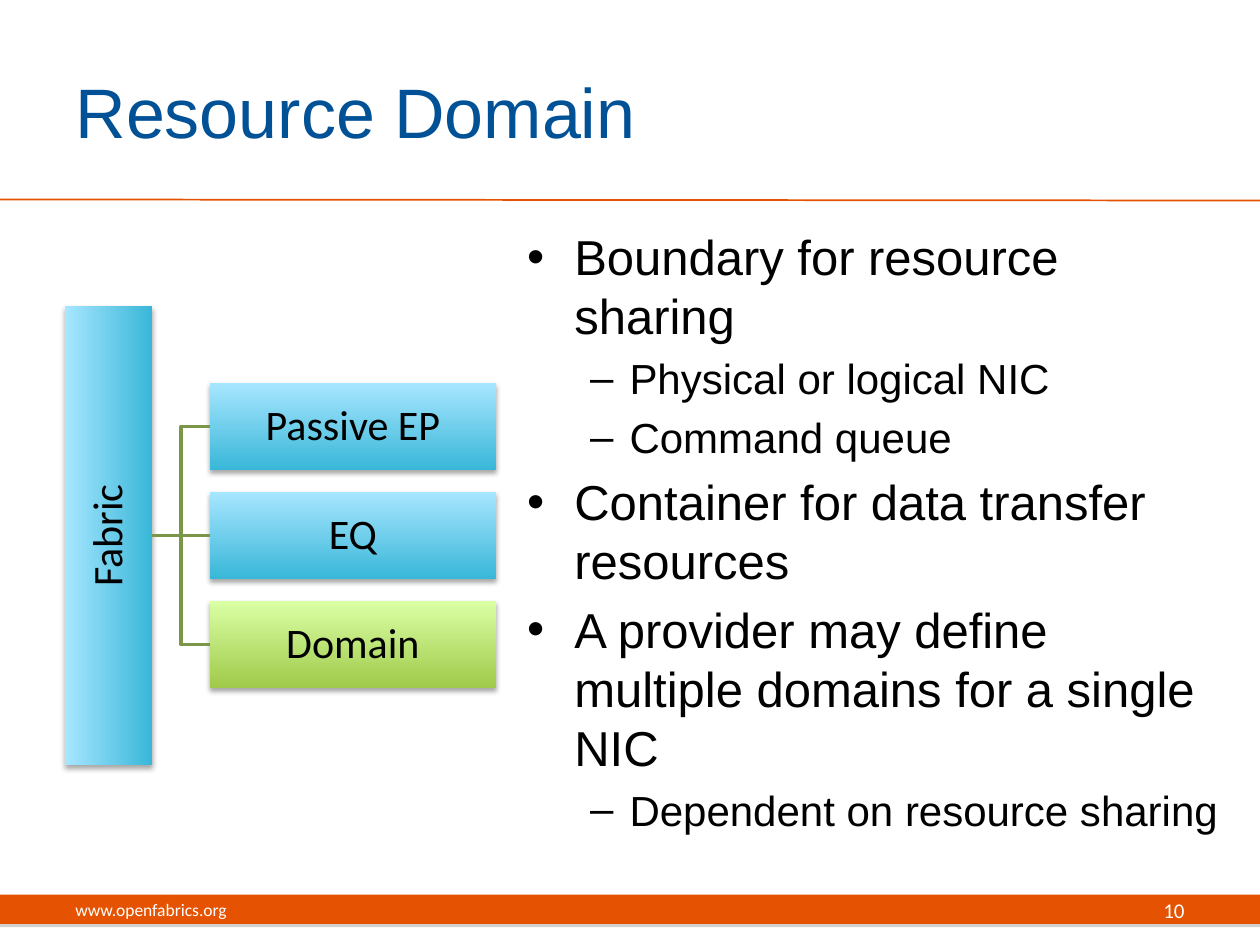
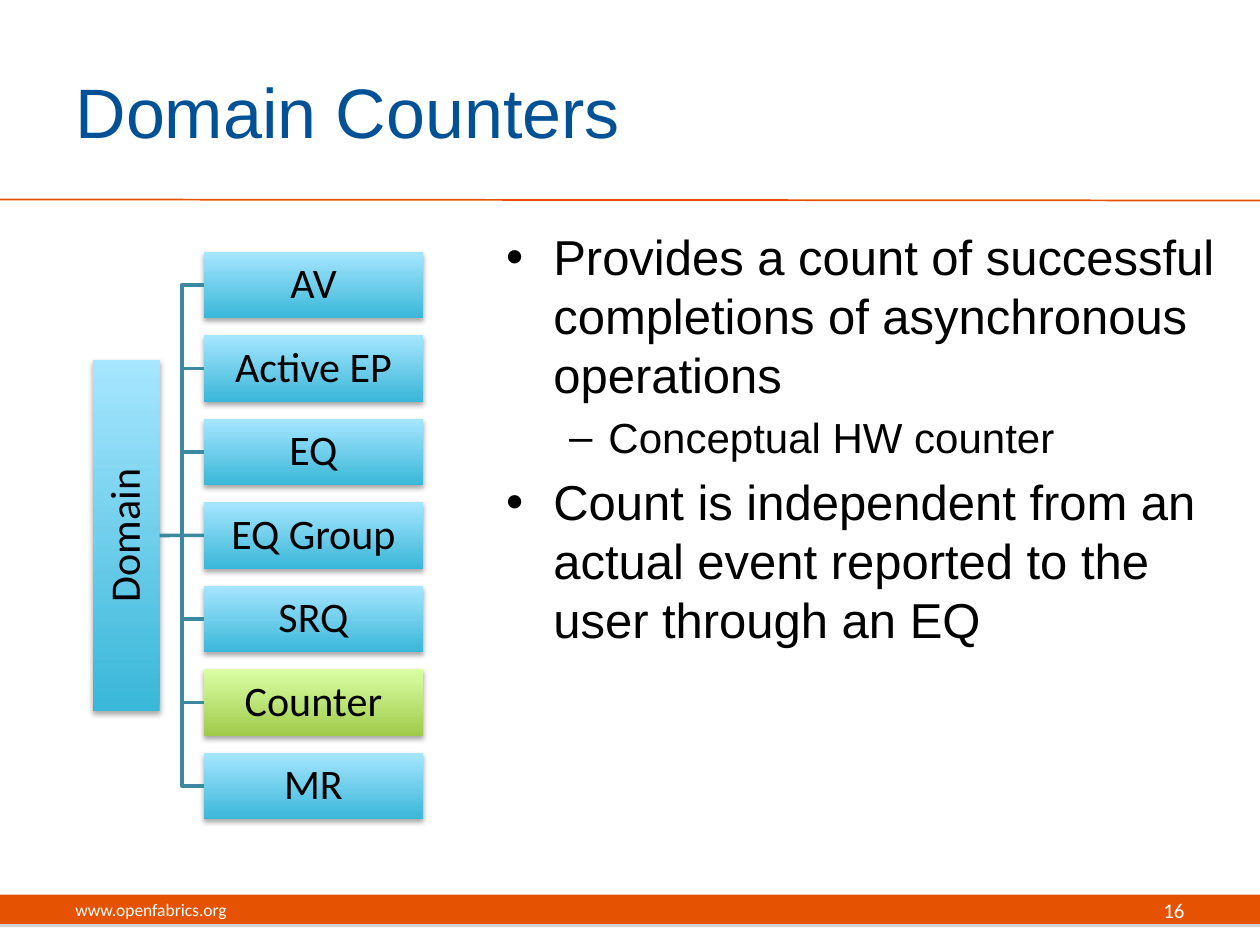
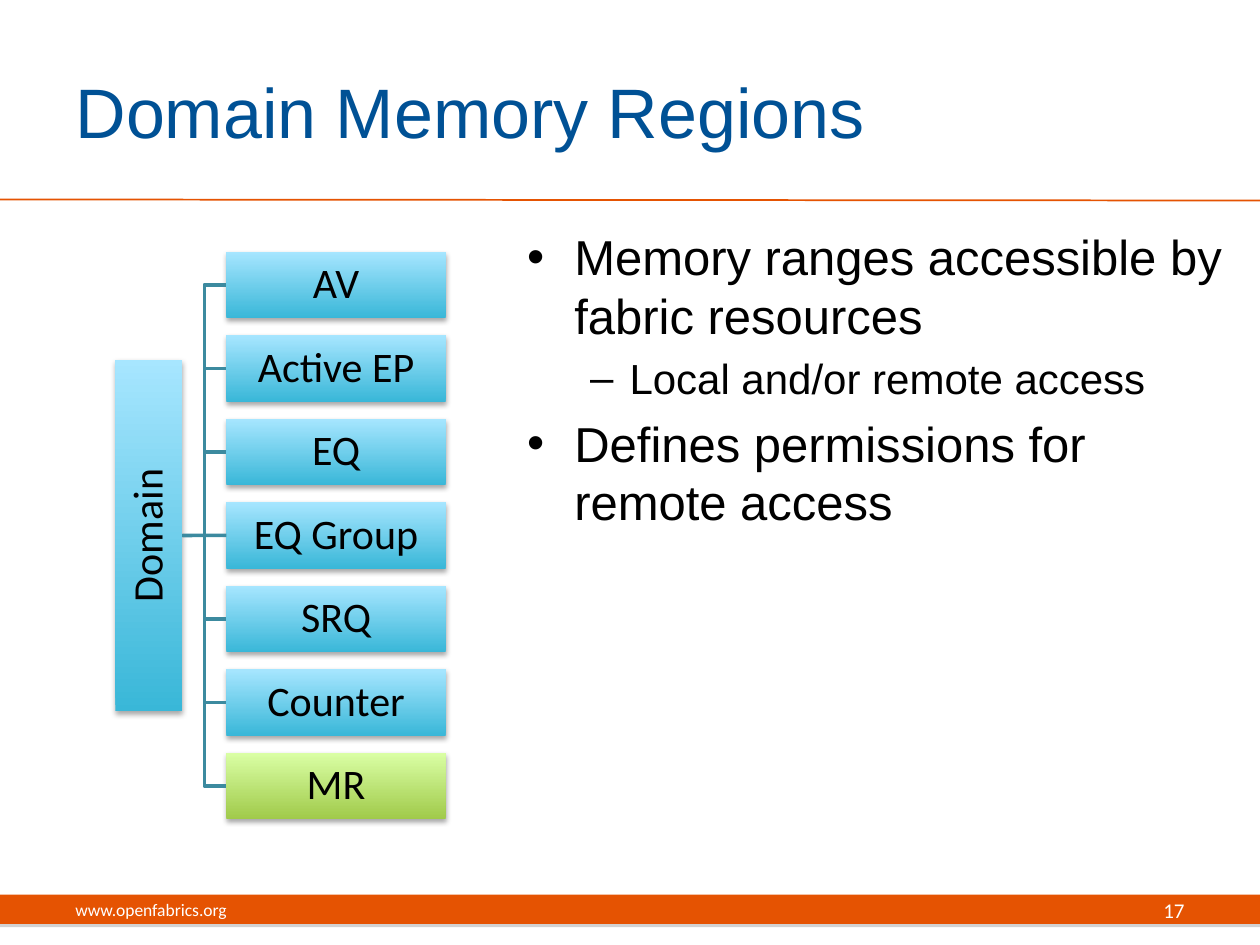
from dataclasses import dataclass

from lxml.etree import SubElement
from pptx import Presentation
from pptx.dml.color import RGBColor
from pptx.enum.shapes import MSO_CONNECTOR, MSO_SHAPE
from pptx.enum.text import MSO_ANCHOR, MSO_AUTO_SIZE, PP_ALIGN
from pptx.oxml.ns import qn
from pptx.util import Inches, Pt

COLUMNS, ROWS = 120, 90
SLIDE_WIDTH, SLIDE_HEIGHT = Inches(10), Inches(7.5)
UNIT = SLIDE_WIDTH // COLUMNS


@dataclass(frozen=True)
class Theme:
    orange: str = "E55302"
    title_blue: str = "005195"
    black: str = "000000"
    white: str = "FFFFFF"
    band_shadow: str = "808080"
    blue_gradient: tuple = ("39B7D8", "A7E6FF")
    green_gradient: tuple = ("A0CA4A", "DAFFA5")
    olive_line: str = "7C9647"
    teal_line: str = "3C8A9F"
    text_font: str = "Arial"
    label_font: str = "Calibri"
    title_size: int = 40
    list_sizes: tuple = (28, 24)
    label_size: int = 24
    address_size: int = 10
    number_size: int = 12


@dataclass(frozen=True)
class Box:
    left: float
    top: float
    width: float
    height: float

    def emu(self):
        return [grid(side) for side in (self.left, self.top, self.width, self.height)]


@dataclass(frozen=True)
class Tree:
    box: Box
    root: str
    branches: tuple
    marked: str
    line_color: str
    root_angle: int


THEME = Theme()
TITLE_BOX = Box(6, 3, 98, 15)
BAND_BOX = Box(0, 85.2, COLUMNS, 2.8)
ADDRESS_BOX = Box(6, 84.25, 38, 4.8)
NUMBER_BOX = Box(86, 84.25, 28, 4.8)
WIDE_LIST = Box(47, 21, 71, 59.4)
NARROW_LIST = Box(49, 21, 69, 59.4)
DOMAIN_PARTS = ("AV", "Active EP", "EQ", "EQ Group", "SRQ", "Counter", "MR")

GAP_SHARE, BRANCH_SHARE, PITCH_SHARE, ROOT_SHARE = 0.66, 3.28, 1.25, 5.26


def grid(units):
    return round(units * UNIT)


def color(value):
    return RGBColor.from_string(value)


def set_font(para, name, size, value):
    para.font.name = name
    para.font.size = Pt(size)
    para.font.color.rgb = color(value)


def place(shape, box):
    shape.left, shape.top, shape.width, shape.height = box.emu()


def add_shadow(shape, value, blur):
    shape.shadow.inherit = False
    effects = shape.element.spPr.find(qn("a:effectLst"))
    shadow = SubElement(effects, qn("a:outerShdw"), blurRad=str(Pt(blur)),
                        dist=str(Pt(1.8)), dir="5400000", rotWithShape="0")
    shade = SubElement(shadow, qn("a:srgbClr"), val=value)
    SubElement(shade, qn("a:alpha"), val="35000")


def add_line(page, start, end, value, width):
    line = page.shapes.add_connector(MSO_CONNECTOR.STRAIGHT, *map(grid, start + end))
    line.line.color.rgb = color(value)
    line.line.width = Pt(width)
    SubElement(line.element.spPr, qn("a:effectLst"))
    return line


def add_footer_text(page, box, text, size, alignment):
    frame = page.shapes.add_textbox(*box.emu()).text_frame
    frame.word_wrap = True
    frame.vertical_anchor = MSO_ANCHOR.MIDDLE
    para = frame.paragraphs[0]
    para.text = text
    para.alignment = alignment
    set_font(para, THEME.label_font, size, THEME.white)


def add_frame(page, number):
    band = page.shapes.add_shape(MSO_SHAPE.RECTANGLE, *BAND_BOX.emu())
    band.fill.solid()
    band.fill.fore_color.rgb = color(THEME.orange)
    band.line.fill.background()
    add_shadow(band, THEME.band_shadow, 0)
    add_line(page, (0, 19), (COLUMNS, 19.1), THEME.orange, 1)
    add_footer_text(page, ADDRESS_BOX, "www.openfabrics.org",
                    THEME.address_size, PP_ALIGN.LEFT)
    add_footer_text(page, NUMBER_BOX, str(number), THEME.number_size, PP_ALIGN.RIGHT)


def fill_title(page, text):
    title = page.shapes.title
    place(title, TITLE_BOX)
    frame = title.text_frame
    frame.text = text
    frame.auto_size = MSO_AUTO_SIZE.NONE
    frame.vertical_anchor = MSO_ANCHOR.MIDDLE
    para = frame.paragraphs[0]
    para.alignment = PP_ALIGN.LEFT
    set_font(para, THEME.text_font, THEME.title_size, THEME.title_blue)


def fill_list(page, box, items):
    body = page.placeholders[1]
    place(body, box)
    frame = body.text_frame
    frame.text = "\n".join(text for level, text in items)
    frame.auto_size = MSO_AUTO_SIZE.NONE
    for para, (level, text) in zip(frame.paragraphs, items):
        para.level = level
        set_font(para, THEME.text_font, THEME.list_sizes[level], THEME.black)
    frame.paragraphs[0].space_before = Pt(0)


def add_node(page, box, label, gradient, angle=90):
    node = page.shapes.add_shape(MSO_SHAPE.RECTANGLE, *box.emu())
    node.fill.gradient()
    node.fill.gradient_angle = angle
    for stop, position, value in zip(node.fill.gradient_stops, (0, 1), gradient):
        stop.position = position
        stop.color.rgb = color(value)
    node.line.fill.background()
    add_shadow(node, THEME.black, 3.1)
    frame = node.text_frame
    frame.word_wrap = True
    frame.vertical_anchor = MSO_ANCHOR.MIDDLE
    frame.margin_left = frame.margin_right = Inches(0.02)
    frame.margin_top = frame.margin_bottom = Inches(0.02)
    para = frame.paragraphs[0]
    para.text = label
    para.alignment = PP_ALIGN.CENTER
    para.line_spacing = 0.9
    set_font(para, THEME.label_font, THEME.label_size, THEME.black)
    return node


def add_elbow(page, start, end, value):
    bend = (start[0] + end[0]) / 2
    corners = [(bend, start[1]), (bend, end[1]), end]
    builder = page.shapes.build_freeform(*map(grid, start))
    builder.add_line_segments([tuple(map(grid, corner)) for corner in corners], close=False)
    elbow = builder.convert_to_shape()
    elbow.fill.background()
    elbow.line.color.rgb = color(value)
    elbow.line.width = Pt(2)
    elbow.shadow.inherit = False


def add_tree(page, tree):
    box = tree.box
    thickness = box.width / (1 + GAP_SHARE + BRANCH_SHARE)
    middle = box.top + box.height / 2
    root_right = box.left + thickness
    branch_left = root_right + GAP_SHARE * thickness
    root_length = ROOT_SHARE * thickness
    root_box = Box(box.left + (thickness - root_length) / 2, middle - thickness / 2,
                   root_length, thickness)
    root = add_node(page, root_box, tree.root, THEME.blue_gradient, tree.root_angle)
    root.rotation = 270

    start = (root_right, middle)
    for index, label in enumerate(tree.branches):
        offset = index - (len(tree.branches) - 1) / 2
        end = (branch_left, middle + offset * PITCH_SHARE * thickness)
        branch_box = Box(branch_left, end[1] - thickness / 2,
                         BRANCH_SHARE * thickness, thickness)
        gradient = THEME.green_gradient if label == tree.marked else THEME.blue_gradient
        branch = add_node(page, branch_box, label, gradient)
        if offset:
            add_elbow(page, start, end, tree.line_color)
        else:
            line = add_line(page, start, end, tree.line_color, 2)
            line.begin_connect(root, 2)
            line.end_connect(branch, 1)
            line.begin_x, line.begin_y = map(grid, start)


def add_page(deck, number, title, tree, list_box, items):
    page = deck.slides.add_slide(deck.slide_layouts[1])
    add_frame(page, number)
    fill_title(page, title)
    fill_list(page, list_box, items)
    add_tree(page, tree)


def domain_tree(left, marked):
    return Tree(Box(left, 21, 31.44, 60), "Domain", DOMAIN_PARTS, marked,
                THEME.teal_line, 0)


def main():
    deck = Presentation()
    deck.slide_width, deck.slide_height = SLIDE_WIDTH, SLIDE_HEIGHT
    fabric_tree = Tree(Box(6.2, 21, 41.04, 60), "Fabric", ("Passive EP", "EQ", "Domain"),
                       "Domain", THEME.olive_line, 90)
    add_page(deck, 10, "Resource Domain", fabric_tree, NARROW_LIST, [
        (0, "Boundary for resource sharing"),
        (1, "Physical or logical NIC"),
        (1, "Command queue"),
        (0, "Container for data transfer resources"),
        (0, "A provider may define multiple domains for a single NIC"),
        (1, "Dependent on resource sharing"),
    ])
    add_page(deck, 16, "Domain Counters", domain_tree(8.85, "Counter"), WIDE_LIST, [
        (0, "Provides a count of successful completions of asynchronous operations"),
        (1, "Conceptual HW counter"),
        (0, "Count is independent from an actual event reported to the user through an EQ"),
    ])
    add_page(deck, 17, "Domain Memory Regions", domain_tree(11, "MR"), NARROW_LIST, [
        (0, "Memory ranges accessible by fabric resources"),
        (1, "Local and/or remote access"),
        (0, "Defines permissions for remote access"),
    ])
    deck.save("out.pptx")


if __name__ == "__main__":
    main()
